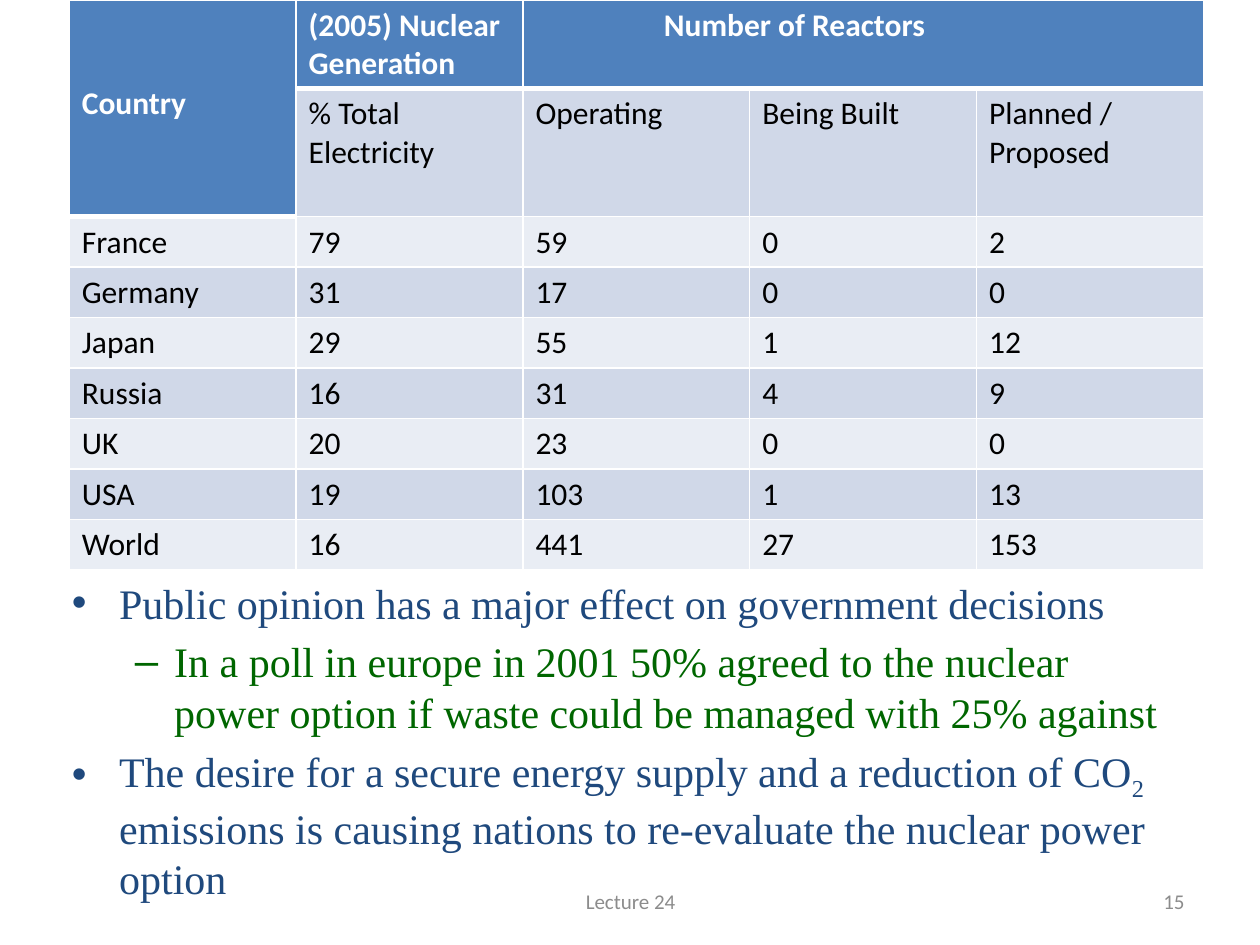
from lxml import etree
from pptx import Presentation, util as u
from pptx.dml.color import RGBColor
from pptx.enum import text as t
from pptx.oxml import ns

COLORS = {
    "white": "FFFFFF", "black": "000000", "header": "4F81BD",
    "band_dark": "D0D8E8", "band_light": "E9EDF4",
    "navy": "1F497D", "green": "006600", "grey": "8C8C8C",
}
COUNTRIES = [
    ("France", 79, 59, 0, 2),
    ("Germany", 31, 17, 0, 0),
    ("Japan", 29, 55, 1, 12),
    ("Russia", 16, 31, 4, 9),
    ("UK", 20, 23, 0, 0),
    ("USA", 19, 103, 1, 13),
    ("World", 16, 441, 27, 153),
]
HEADINGS = [
    ("Country", "(2005) Nuclear Generation", "Number of Reactors", "", ""),
    ("", "% Total Electricity", "Operating", "Being Built", "Planned / Proposed"),
]
POINTS = [
    (0, "navy", [("Public opinion has a major effect on government decisions", 0)]),
    (1, "green", [("In a poll in europe in 2001 50% agreed to the nuclear power option "
                   "if waste could be managed with 25% against", 0)]),
    (0, "navy", [("The desire for a secure energy supply and a reduction of CO", 0), ("2", -25000),
                 (" emissions is causing nations to re-evaluate the nuclear power option", 0)]),
]


def write(paragraph, words, size=18, font="Calibri", color="black", bold=False, baseline=0):
    """Add a formatted run to a paragraph."""
    run = paragraph.add_run()
    run.text = words
    run.font.size = u.Pt(size)
    run.font.name = font
    run.font.bold = bold
    run.font.color.rgb = RGBColor.from_string(COLORS[color])
    if baseline:
        run.font._element.set("baseline", str(baseline))


def border(cell, bottom_width):
    """Draw white lines around a table cell."""
    properties = cell._tc.get_or_add_tcPr()
    for side, width in (("L", 1), ("R", 1), ("T", 1), ("B", bottom_width)):
        line = etree.SubElement(properties, ns.qn(f"a:ln{side}"), w=str(u.Pt(width)))
        fill = etree.SubElement(line, ns.qn("a:solidFill"))
        etree.SubElement(fill, ns.qn("a:srgbClr"), val=COLORS["white"])


def add_reactor_table(slide):
    """Add the table of nuclear generation and reactors by country."""
    rows = HEADINGS + COUNTRIES
    heights = [0.7, 1.02] + [0.4] * len(COUNTRIES)
    table = slide.shapes.add_table(
        len(rows), 5, u.Inches(0.55), 0, u.Inches(9), u.Inches(sum(heights))).table
    for row, height in zip(table.rows, heights):
        row.height = u.Inches(height)
    for r, values in enumerate(rows):
        for c, value in enumerate(values):
            cell = table.cell(r, c)
            heading = r == 0 or (r == 1 and c == 0)
            band = "band_dark" if r % 2 else "band_light"
            border(cell, 3 if heading else 1)
            cell.fill.solid()
            cell.fill.fore_color.rgb = RGBColor.from_string(COLORS["header" if heading else band])
            if value != "":
                write(cell.text_frame.paragraphs[0], str(value),
                      color="white" if heading else "black", bold=heading)
    country, reactors = table.cell(0, 0), table.cell(0, 2)
    country.merge(table.cell(1, 0))
    country.vertical_anchor = t.MSO_ANCHOR.MIDDLE
    country.margin_bottom = u.Inches(0.13)
    reactors.merge(table.cell(0, 4))
    reactors.margin_left = u.Inches(1.12)


def fill_points(body):
    """Place the body placeholder and write its bulleted points."""
    body.left, body.top, body.width, body.height = map(u.Inches, (0.47, 4.53, 9, 2.56))
    body.fill.solid()
    body.fill.fore_color.rgb = RGBColor.from_string(COLORS["white"])
    frame = body.text_frame
    frame.auto_size = t.MSO_AUTO_SIZE.NONE
    for number, (level, color, pieces) in enumerate(POINTS):
        point = frame.add_paragraph() if number else frame.paragraphs[0]
        point.level = level
        for words, baseline in pieces:
            write(point, words, size=24, font="Times New Roman", color=color, baseline=baseline)


def add_footer(slide, words, left, width, align):
    """Add a grey footer text at the bottom of the slide."""
    frame = slide.shapes.add_textbox(
        u.Inches(left), u.Inches(6.95), u.Inches(width), u.Inches(0.4)).text_frame
    frame.word_wrap = True
    frame.vertical_anchor = t.MSO_ANCHOR.MIDDLE
    frame.paragraphs[0].alignment = align
    write(frame.paragraphs[0], words, size=12, color="grey")


def main():
    """Build and save the slide."""
    deck = Presentation()
    deck.slide_width, deck.slide_height = u.Inches(10), u.Inches(7.5)
    slide = deck.slides.add_slide(deck.slide_layouts[1])
    title = slide.shapes.title._element
    title.getparent().remove(title)
    fill_points(slide.placeholders[1])
    add_footer(slide, "15", 7.17, 2.33, t.PP_ALIGN.RIGHT)
    add_footer(slide, "Lecture 24", 3.42, 3.17, t.PP_ALIGN.CENTER)
    add_reactor_table(slide)
    deck.save("out.pptx")


if __name__ == "__main__":
    main()
